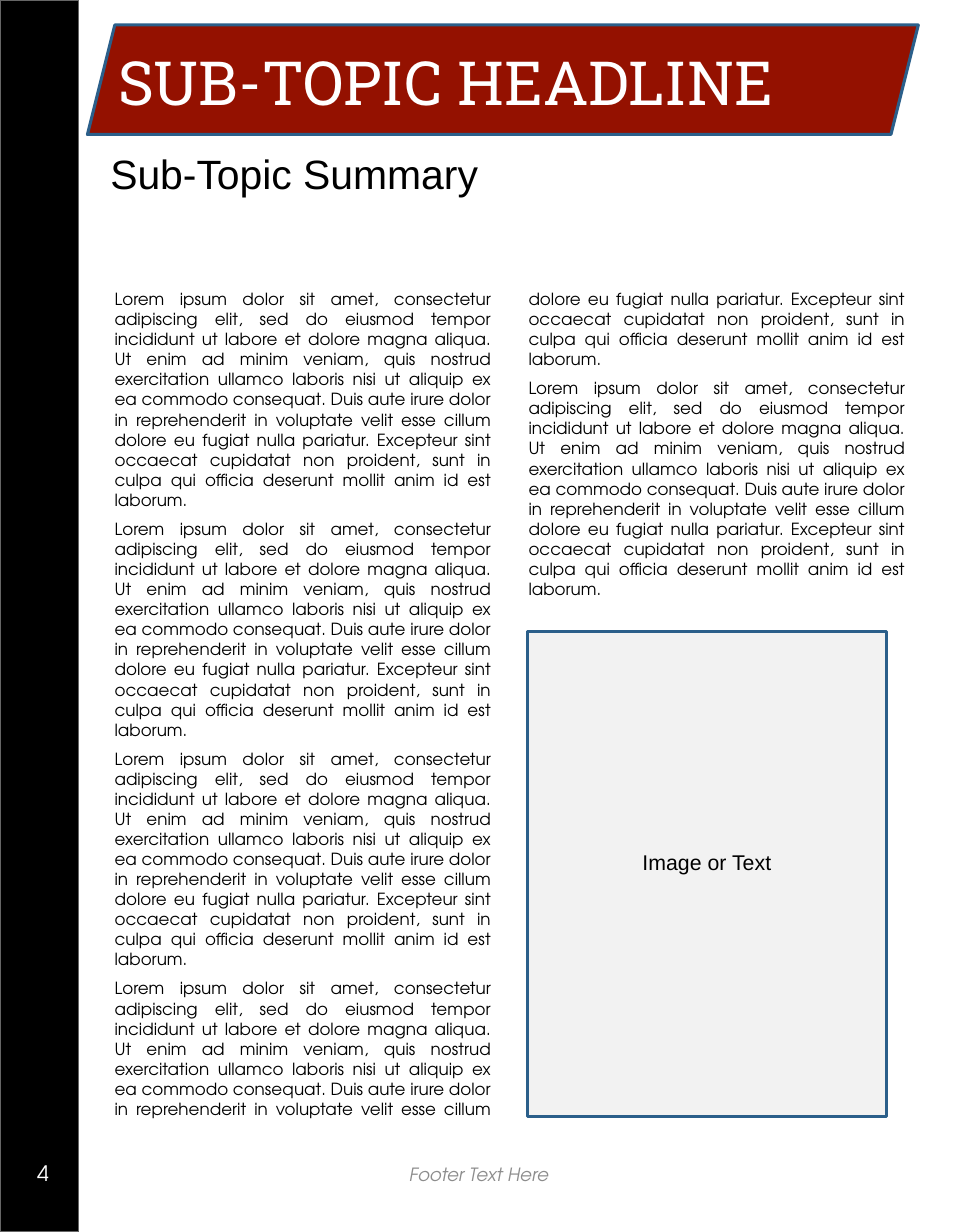
from pptx import Presentation
from pptx.dml.color import RGBColor
from pptx.enum.shapes import MSO_SHAPE
from pptx.enum.text import MSO_ANCHOR, PP_ALIGN
from pptx.util import Cm, Pt

WIDE, HIGH = 22.23, 28.58
INSET = 0.25
LOREM = (
    "Lorem ipsum dolor sit amet, consectetur adipiscing elit, sed do eiusmod "
    "tempor incididunt ut labore et dolore magna aliqua. Ut enim ad minim "
    "veniam, quis nostrud exercitation ullamco laboris nisi ut aliquip ex ea "
    "commodo consequat. Duis aute irure dolor in reprehenderit in voluptate "
    "velit esse cillum dolore eu fugiat nulla pariatur. Excepteur sint occaecat "
    "cupidatat non proident, sunt in culpa qui officia deserunt mollit anim id "
    "est laborum."
)
STORY = [LOREM] * 5
BLACK, WHITE, BLUE = "000000", "FFFFFF", "2B5F8A"
SERIF, SANS, ROUND = "Roboto Slab", "Arial", "TeX Gyre Adventor"

# place (left, top, width, height in cm), preset, fill, line, line width
SHAPES = {
    "band": ((0, 0, 1.83, HIGH), MSO_SHAPE.RECTANGLE, BLACK, "666666", 0.75),
    "banner": ((2.03, 0.58, 19.28, 2.54), MSO_SHAPE.PARALLELOGRAM, "941100", BLUE, 2),
    "panel": ((12.24, 14.66, 8.33, 11.25), MSO_SHAPE.RECTANGLE, "F2F2F2", BLUE, 2),
}
# place, lines, font, size, colour
TEXTS = {
    "number": ((0.61, 26.8, 1.12, 0.86), ["4"], ROUND, 14, WHITE),
    "title": ((2.49, 0.79, 18.34, 1.78), ["SUB-TOPIC HEADLINE"], SERIF, 40, WHITE),
    "summary": ((2.31, 3.2, 15.16, 3.05), ["Sub-Topic Summary"], SANS, 26.9, BLACK),
    "body": ((2.31, 6.45, 18.95, 20.04), STORY, ROUND, 11, BLACK),
    "footer": ((7.37, 26.49, 7.49, 1.52), ["Footer Text Here"], ROUND, 12, "8C8C8C"),
}
ORDER = ["band", "number", "banner", "title", "summary", "body", "panel", "footer"]
PADDED = {"margin_top": Cm(INSET), "margin_bottom": Cm(INSET)}
MIDDLE = {"vertical_anchor": MSO_ANCHOR.MIDDLE}
FRAMES = {
    "number": {"word_wrap": False},
    "title": PADDED,
    "summary": PADDED,
    "body": PADDED,
    "panel": {**MIDDLE, "margin_bottom": Cm(0.72)},
    "footer": MIDDLE,
}
ALIGNS = {
    "body": PP_ALIGN.JUSTIFY,
    "panel": PP_ALIGN.CENTER,
    "footer": PP_ALIGN.CENTER,
}


def tint(form, code):
    form.rgb = RGBColor.from_string(code)


def assign(item, values):
    for key, value in values.items():
        setattr(item, key, value)


def write(shape, name, lines, font, size, code):
    frame = shape.text_frame
    assign(frame, {"word_wrap": True, "margin_left": Cm(INSET),
                   "margin_right": Cm(INSET), **FRAMES[name]})
    for i, line in enumerate(lines):
        para = frame.add_paragraph() if i else frame.paragraphs[0]
        para.text = line
        para.alignment = ALIGNS.get(name, PP_ALIGN.LEFT)
        if i:
            para.space_before = Pt(5.8)
        assign(para.font, {"name": font, "size": Pt(size),
                           "italic": name == "footer"})
        tint(para.font.color, code)


def flow(shape, count, gap, indent):
    """Set the text in columns with an indented left edge."""
    body = shape.element.txBody
    body.bodyPr.set("numCol", str(count))
    body.bodyPr.set("spcCol", str(Cm(gap)))
    for para in body.p_lst:
        para.get_or_add_pPr().set("marL", str(Cm(indent)))


def draw(tree, place, kind, fill, edge, width):
    shape = tree.add_shape(kind, *map(Cm, place))
    shape.shadow.inherit = False
    shape.fill.solid()
    tint(shape.fill.fore_color, fill)
    tint(shape.line.color, edge)
    shape.line.width = Pt(width)
    return shape


def main():
    deck = Presentation()
    assign(deck, {"slide_width": Cm(WIDE), "slide_height": Cm(HIGH)})
    tree = deck.slides.add_slide(deck.slide_layouts[6]).shapes
    made = {}
    for name in ORDER:
        if name in SHAPES:
            made[name] = draw(tree, *SHAPES[name])
        else:
            place, *words = TEXTS[name]
            made[name] = tree.add_textbox(*map(Cm, place))
            write(made[name], name, *words)
    write(made["panel"], "panel", ["Image or Text"], SANS, 14, BLACK)
    flow(made["body"], 2, 0.76, 0.1)
    deck.save("out.pptx")


if __name__ == "__main__":
    main()
